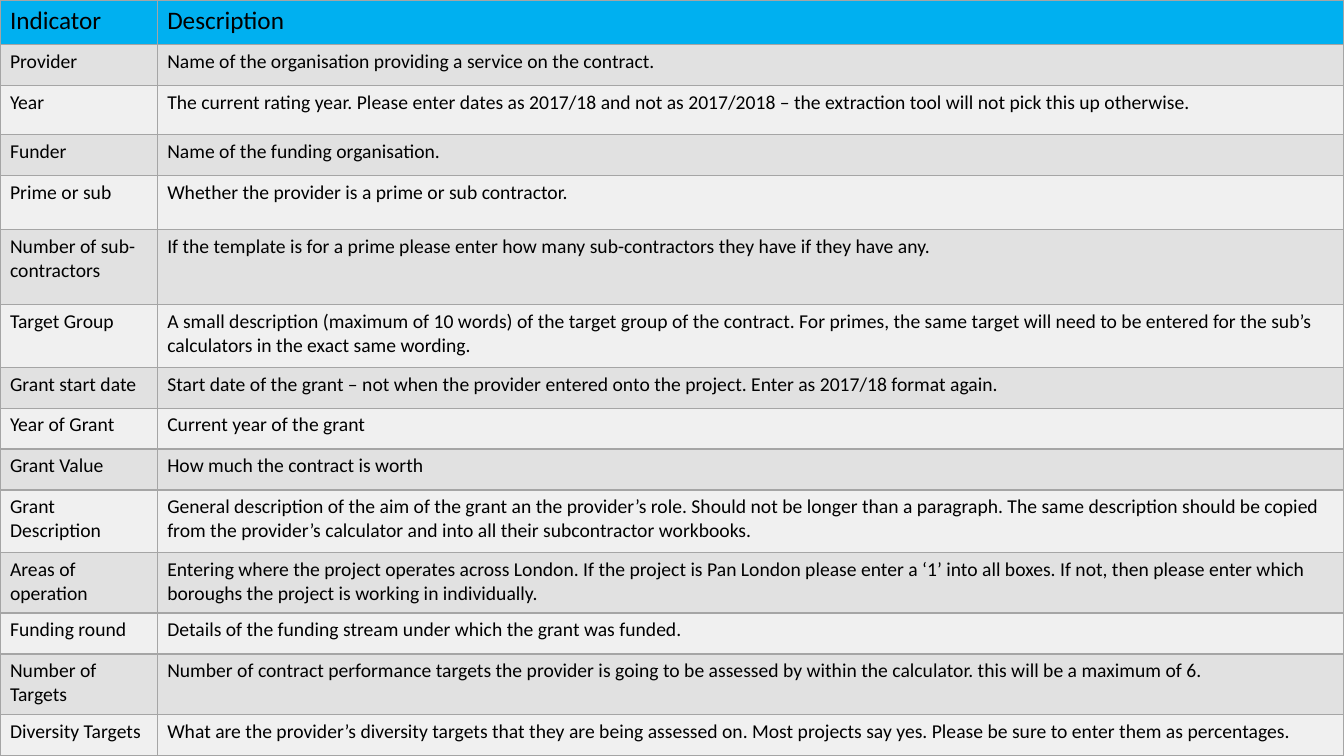
from lxml.etree import SubElement
from pptx import Presentation
from pptx.dml.color import RGBColor
from pptx.oxml.ns import qn
from pptx.util import Pt

WIDTH, HEIGHT = 960, 540
COLS = [112.3, 847.7]
HEAD, BANDS = "00B0F0", ["F0F0F0", "E1E1E1"]
GRID, INK = "A5A5A5", "000000"

# Row height, indicator, description
ROWS = [
    (31.7, "Indicator", "Description"),
    (29.3, "Provider", "Name of the organisation providing a service on the contract."),
    (35, "Year", "The current rating year. Please enter dates as 2017/18 and not as "
     "2017/2018 – the extraction tool will not pick this up otherwise."),
    (29.3, "Funder", "Name of the funding organisation."),
    (39, "Prime or sub", "Whether the provider is a prime or sub contractor."),
    (53.6, "Number of sub-contractors", "If the template is for a prime please enter "
     "how many sub-contractors they have if they have any."),
    (44.6, "Target Group", "A small description (maximum of 10 words) of the target group "
     "of the contract. For primes, the same target will need to be entered for the sub’s "
     "calculators in the exact same wording."),
    (29.2, "Grant start date", "Start date of the grant – not when the provider entered "
     "onto the project. Enter as 2017/18 format again."),
    (29.2, "Year of Grant", "Current year of the grant"),
    (29.3, "Grant Value", "How much the contract is worth"),
    (44.6, "Grant Description", "General description of the aim of the grant an the "
     "provider’s role. Should not be longer than a paragraph. The same description should "
     "be copied from the provider’s calculator and into all their subcontractor workbooks."),
    (43.2, "Areas of operation", "Entering where the project operates across London. If the "
     "project is Pan London please enter a ‘1’ into all boxes. If not, then please enter "
     "which boroughs the project is working in individually."),
    (29.3, "Funding round", "Details of the funding stream under which the grant was funded."),
    (43.2, "Number of Targets", "Number of contract performance targets the provider is going "
     "to be assessed by within the calculator. this will be a maximum of 6."),
    (29.2, "Diversity Targets", "What are the provider’s diversity targets that they are being "
     "assessed on. Most projects say yes. Please be sure to enter them as percentages."),
]


def color(code):
    return RGBColor.from_string(code)


def add_grid(cell):
    """Draw a thin line on all four sides; call before the fill is set."""
    props = cell._tc.get_or_add_tcPr()
    for side in ("a:lnL", "a:lnR", "a:lnT", "a:lnB"):
        line = SubElement(props, qn(side), w=str(Pt(1)))
        fill = SubElement(line, qn("a:solidFill"))
        SubElement(fill, qn("a:srgbClr"), val=GRID)


def set_cell(cell, text, size, fill):
    add_grid(cell)
    cell.fill.solid()
    cell.fill.fore_color.rgb = color(fill)
    cell.text = text
    font = cell.text_frame.paragraphs[0].runs[0].font
    font.name = "Calibri"
    font.size = Pt(size)
    font.bold = False
    font.color.rgb = color(INK)


def add_guide(slide):
    frame = slide.shapes.add_table(len(ROWS), len(COLS), 0, 0, Pt(WIDTH), Pt(HEIGHT))
    table = frame.table
    for col, width in zip(table.columns, COLS):
        col.width = Pt(width)
    for i, (height, *texts) in enumerate(ROWS):
        table.rows[i].height = Pt(height)
        size, fill = (14, BANDS[i % 2]) if i else (18, HEAD)
        for j, text in enumerate(texts):
            set_cell(table.cell(i, j), text, size, fill)


def main():
    deck = Presentation()
    deck.slide_width, deck.slide_height = Pt(WIDTH), Pt(HEIGHT)
    blank = deck.slide_layouts[6]
    add_guide(deck.slides.add_slide(blank))
    deck.save("out.pptx")


if __name__ == "__main__":
    main()
